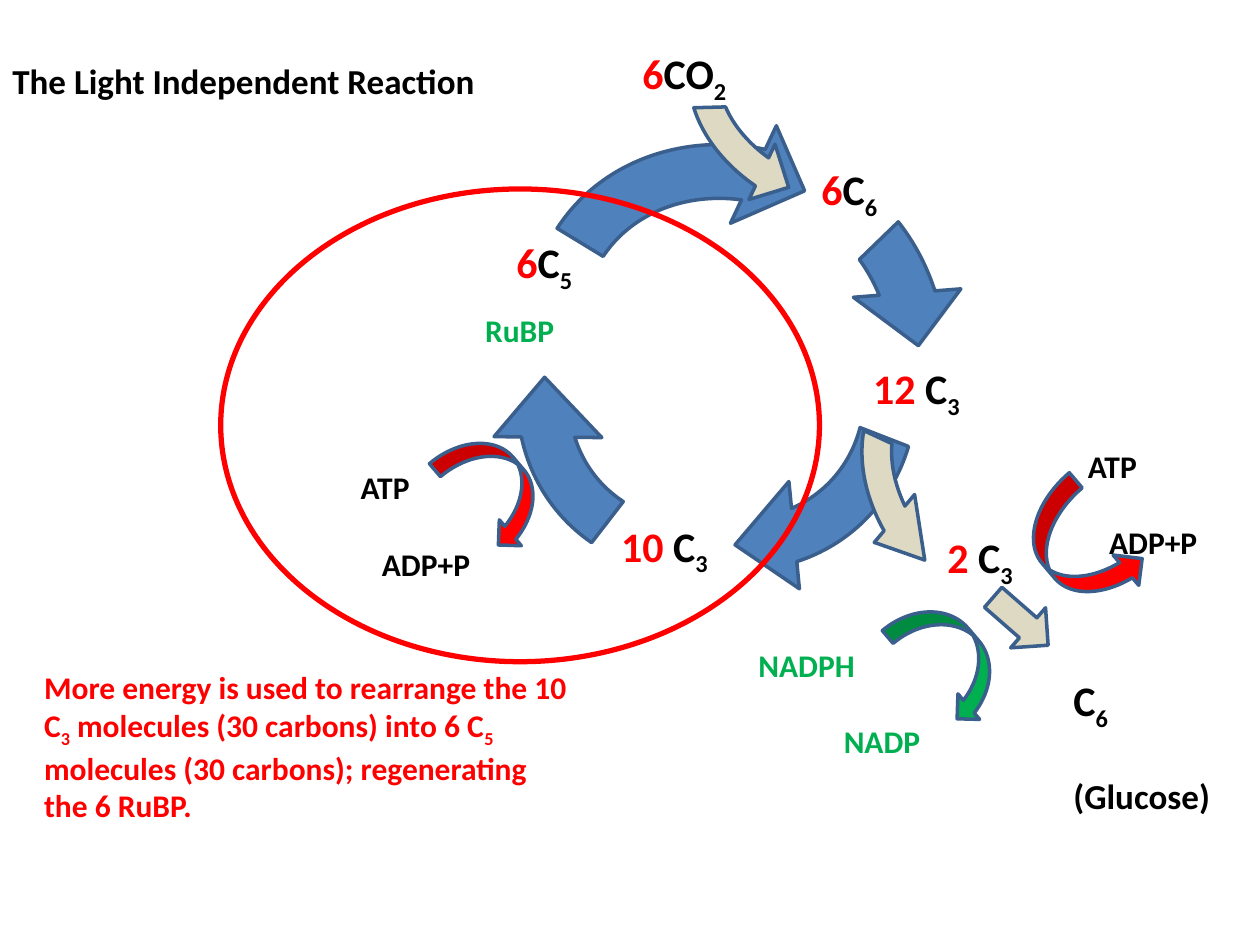
"""Builds the slide on the light independent reaction."""
from pptx import Presentation
from pptx import util as u
from pptx.dml.color import RGBColor
from pptx.enum import shapes
from pptx.oxml import ns

BLACK = RGBColor(0x00, 0x00, 0x00)
RED = RGBColor(0xFF, 0x00, 0x00)
GREEN = RGBColor(0x00, 0xB0, 0x50)
BLUE = RGBColor(0x4F, 0x81, 0xBD)
SAND = RGBColor(0xDD, 0xD9, 0xC3)
EDGE = RGBColor(0x3A, 0x5F, 0x8C)
FORM = shapes.MSO_SHAPE


class Deck:
    font = {"name": "Calibri", "bold": True}

    def __init__(self, wide, high):
        self.show = Presentation()
        self.show.slide_width, self.show.slide_height = u.Cm(wide), u.Cm(high)
        self.slide = self.show.slides.add_slide(self.show.slide_layouts[6])

    def text(self, box, paras, size):
        frame = self.slide.shapes.add_textbox(*map(u.Cm, box)).text_frame
        frame.word_wrap = True
        for i, (runs, gap, inset) in enumerate(paras):
            para = frame.add_paragraph() if i else frame.paragraphs[0]
            para.space_before = u.Pt(gap)
            if inset:
                para._p.get_or_add_pPr().set("marL", str(u.Cm(inset)))
            for words, color, *low in runs:
                run = para.add_run()
                run.text = words
                for key, val in {**self.font, "size": u.Pt(low[1] if low[1:] else size)}.items():
                    setattr(run.font, key, val)
                run.font.color.rgb = color
                if low and low[0]:
                    run._r.get_or_add_rPr().set("baseline", "-25000")

    def line(self, box, words, color, size):
        self.text(box, [([(words, color)], 0, 0)], size)

    def count(self, box, num, atom, sub):
        self.text(box, [(tally(num, atom, sub), 0, 0)], 24)

    def pair(self, box, first, last, insets, color):
        rows = zip((first, last), (0, 22), insets)
        self.text(box, [([(words, color)], gap, inset) for words, gap, inset in rows], 18)

    def shape(self, form, box, fill=None, turn=0, flip=False, adjust=(), edge=EDGE, width=2):
        item = self.slide.shapes.add_shape(form, *map(u.Cm, box))
        item.shadow.inherit = False
        item.rotation = turn
        for i, val in enumerate(adjust):
            item.adjustments[i] = val
        if flip:
            item._element.spPr.find(ns.qn("a:xfrm")).set("flipH", "1")
        if fill is None:
            item.fill.background()
        else:
            item.fill.solid()
            item.fill.fore_color.rgb = fill
        item.line.color.rgb = edge
        item.line.width = u.Pt(width)

    def arc(self, left, top, turn, adjust):
        self.shape(FORM.CIRCULAR_ARROW, (left, top, 8.69, 9.53), BLUE, turn, adjust=adjust)

    def branch(self, box, turn, adjust):
        self.shape(FORM.CIRCULAR_ARROW, box, SAND, turn, True, adjust)

    def hook(self, box, fill, flip):
        self.shape(FORM.CURVED_RIGHT_ARROW, box, fill, 319.7, flip)


def tally(num, atom, sub):
    return [(num, RED), (atom, BLACK), (sub, BLACK, True)]


def main():
    deck = Deck(25.4, 19.05)
    deck.line((0, 1.07, 22.22, 1.88), "The Light Independent Reaction", BLACK, 20)
    deck.count((10.16, 4.65, 4.88, 1.3), "6", "C", "5")
    deck.line((9.53, 6.15, 4.24, 1.02), "RuBP", GREEN, 18)
    deck.arc(10.49, 2.03, 295.2, (0.125, 11.42, 204.58, 165.67, 0.125))
    deck.branch((14.22, -1.12, 4.93, 6.45), 295.2, (0.125, 11.42, 204.58, 177.99, 0.125))
    deck.count((12.7, 0.84, 2.74, 1.3), "6", "CO", "2")
    deck.count((16.31, 3.18, 3.61, 1.3), "6", "C", "6")
    deck.arc(10.92, 2.46, 355.5, (0.125, 11.42, 204.58, 192.26, 0.125))
    deck.count((17.35, 7.19, 6.99, 1.3), "12", " C", "3")
    deck.arc(10.13, 2.74, 135.6, (0.12, 11.66, 173.62, 147.42, 0.125))
    deck.branch((17.35, 6.58, 5.05, 6.5), 321.7, (0.12, 18.73, 204.2, 177.99, 0.125))
    deck.text((18.85, 10.59, 6.55, 4.88), [
        (tally("2", " C", "3"), 0, 0),
        ([("C", BLACK), ("6", BLACK, True)], 49, 2.54),
        ([("(Glucose)", BLACK, False, 20)], 24.5, 2.54),
    ], 24)
    deck.shape(FORM.RIGHT_ARROW, (19.84, 11.99, 1.47, 1.07), SAND, 41.1)
    deck.count((12.27, 10.36, 5.08, 1.3), "10", " C", "3")
    deck.hook((21.01, 9.73, 1.6, 2.67), RED, False)
    deck.pair((21.39, 8.89, 4.01, 2.57), "ATP", "ADP+P", (0.29, 0.72), BLACK)
    deck.hook((18.49, 11.96, 1.35, 2.67), GREEN, True)
    deck.pair((15.04, 12.9, 4.45, 2.57), "NADPH", "NADP", (0, 1.72), GREEN)
    deck.text((0.64, 13.34, 11.23, 3.33), [([
        ("More energy is used to rearrange the 10 C", RED), ("3", RED, True),
        (" molecules (30 carbons) into 6 C", RED), ("5", RED, True),
        (" molecules (30 carbons); regenerating the 6 RuBP.", RED),
    ], 0, 0)], 18)
    deck.arc(10.13, 2.87, 231.7, (0.12, 11.66, 173.62, 153.57, 0.125))
    deck.hook((9.3, 8.61, 1.37, 2.49), RED, True)
    deck.pair((6.73, 9.32, 4.01, 2.57), "ATP", "ADP+P", (0.29, 0.72), BLACK)
    deck.shape(FORM.OVAL, (4.45, 3.81, 12.07, 9.53), edge=RED, width=3)
    deck.show.save("out.pptx")


if __name__ == "__main__":
    main()
